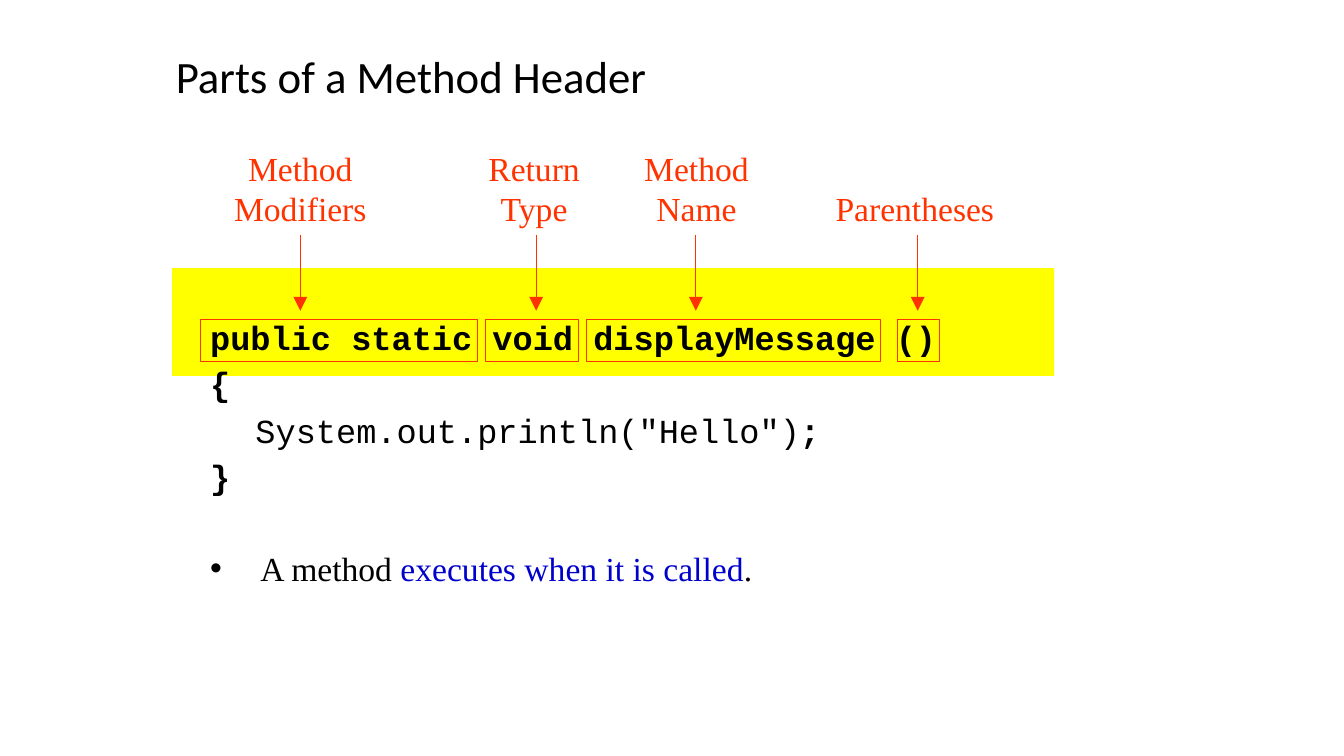
"""Build a slide that names the parts of a method header."""
import lxml.etree
import pptx
import pptx.dml.color
import pptx.enum.shapes
import pptx.enum.text
import pptx.oxml.ns
import pptx.util

Pt = pptx.util.Pt
RGBColor = pptx.dml.color.RGBColor
ALIGN = pptx.enum.text.PP_ALIGN
ANCHOR = pptx.enum.text.MSO_ANCHOR
FIT = pptx.enum.text.MSO_AUTO_SIZE
BLACK = RGBColor(0, 0, 0)
RED = RGBColor(0xFF, 0x33, 0)
YELLOW = RGBColor(0xFF, 0xFF, 0)
BLUE = RGBColor(0, 0, 0xCC)
CODE, SERIF = "Courier New", "Times New Roman"
BOX_LEFT, BOX_TOP, BOX_HIGH = 143, 228, 30
PARTS = [
    ("Method Modifiers", (151.5, 126), (BOX_LEFT, 198), 214.5),
    ("Return Type", (336.5, 90), (347, 66), 383),
    ("Method Name", (449.5, 96), (419, 210), 497),
    ("Parentheses", (588.5, 130), (641, 30), 655.5),
]


def child(node, tag, **attrs):
    """Append an XML element to a node."""
    return lxml.etree.SubElement(node, pptx.oxml.ns.qn(tag), attrs)


def write(para, text, font=SERIF, size=24, color=BLACK, bold=False):
    """Add a formatted run to a paragraph."""
    run = para.add_run()
    run.text = text
    run.font.name = font
    run.font.size = Pt(size)
    run.font.bold = bold
    run.font.color.rgb = color


def frame(slide, left, top, width, height, wrap=True):
    """Add a text box and return its text frame."""
    box = slide.shapes.add_textbox(Pt(left), Pt(top), Pt(width), Pt(height))
    box.text_frame.word_wrap = wrap
    return box.text_frame


def block(slide, left, top, width, height, fill=None, line=None):
    """Add a plain rectangle, filled or outlined."""
    kind = pptx.enum.shapes.MSO_SHAPE.RECTANGLE
    rect = slide.shapes.add_shape(kind, Pt(left), Pt(top), Pt(width), Pt(height))
    rect.shadow.inherit = False
    for paint, color in ((rect.fill, fill), (rect.line.fill, line)):
        if color is None:
            paint.background()
        else:
            paint.solid()
            paint.fore_color.rgb = color
    if line is not None:
        rect.line.width = Pt(0.75)


def arrow(slide, x, top, end):
    """Add a red arrow that points down."""
    kind = pptx.enum.shapes.MSO_CONNECTOR.STRAIGHT
    link = slide.shapes.add_connector(kind, Pt(x), Pt(top), Pt(x), Pt(end))
    link.line.color.rgb = RED
    link.line.width = Pt(0.75)
    outline = link.line._get_or_add_ln()
    child(outline, "a:tailEnd", type="triangle", w="lg", len="lg")
    child(link._element.spPr, "a:effectLst")


def label(slide, text, left, width):
    """Add a centred label that ends just above the arrows."""
    lone = " " not in text
    top, height = (131, 36) if lone else (102, 65)
    body = frame(slide, left, top, width, height, wrap=not lone)
    body.auto_size = FIT.SHAPE_TO_FIT_TEXT
    para = body.paragraphs[0]
    para.alignment = ALIGN.CENTER
    write(para, text, color=RED)


def space(para, before=10, left=0, hang=0):
    """Set the spacing and indents of a paragraph."""
    para.line_spacing = 0.8
    para.space_before = Pt(before)
    props = para._p.get_or_add_pPr()
    props.set("marL", str(Pt(left)))
    props.set("indent", str(Pt(-hang)))
    return props


def listing(slide):
    """Add the code and the bullet below it."""
    body = frame(slide, BOX_LEFT, BOX_TOP + 0.5, 612, 198)
    lines = [
        (0, [("public static void displayMessage ()", True)]),
        (0, [("{", True)]),
        (32.4, [('System.out.println("Hello")', False), (";", True)]),
        (0, [("}", True)]),
    ]
    para = body.paragraphs[0]
    for left, runs in lines:
        space(para, left=left)
        for text, bold in runs:
            write(para, text, font=CODE, bold=bold)
        para = body.add_paragraph()
    props = space(para, before=43, left=36, hang=36)
    child(props, "a:buFont", typeface="Arial")
    child(props, "a:buChar", char="•")
    write(para, "A method ")
    write(para, "executes when it is called", color=BLUE)
    write(para, ".")


def main():
    """Build and save the slide."""
    deck = pptx.Presentation()
    deck.slide_width, deck.slide_height = Pt(960), Pt(540)
    slide = deck.slides.add_slide(deck.slide_layouts[6])
    title = frame(slide, 118.5, 17.5, 351, 78)
    title.vertical_anchor = ANCHOR.MIDDLE
    title.paragraphs[0].line_spacing = 0.9
    write(title.paragraphs[0], "Parts of a Method Header", font="Calibri", size=32)
    block(slide, 123, 191.5, 630, 77, fill=YELLOW)
    listing(slide)
    for text, (left, width), (start, wide), x in PARTS:
        block(slide, start, BOX_TOP, wide, BOX_HIGH, line=RED)
        label(slide, text, left, width)
        arrow(slide, x, 168, 222)
    deck.save("out.pptx")


if __name__ == "__main__":
    main()
